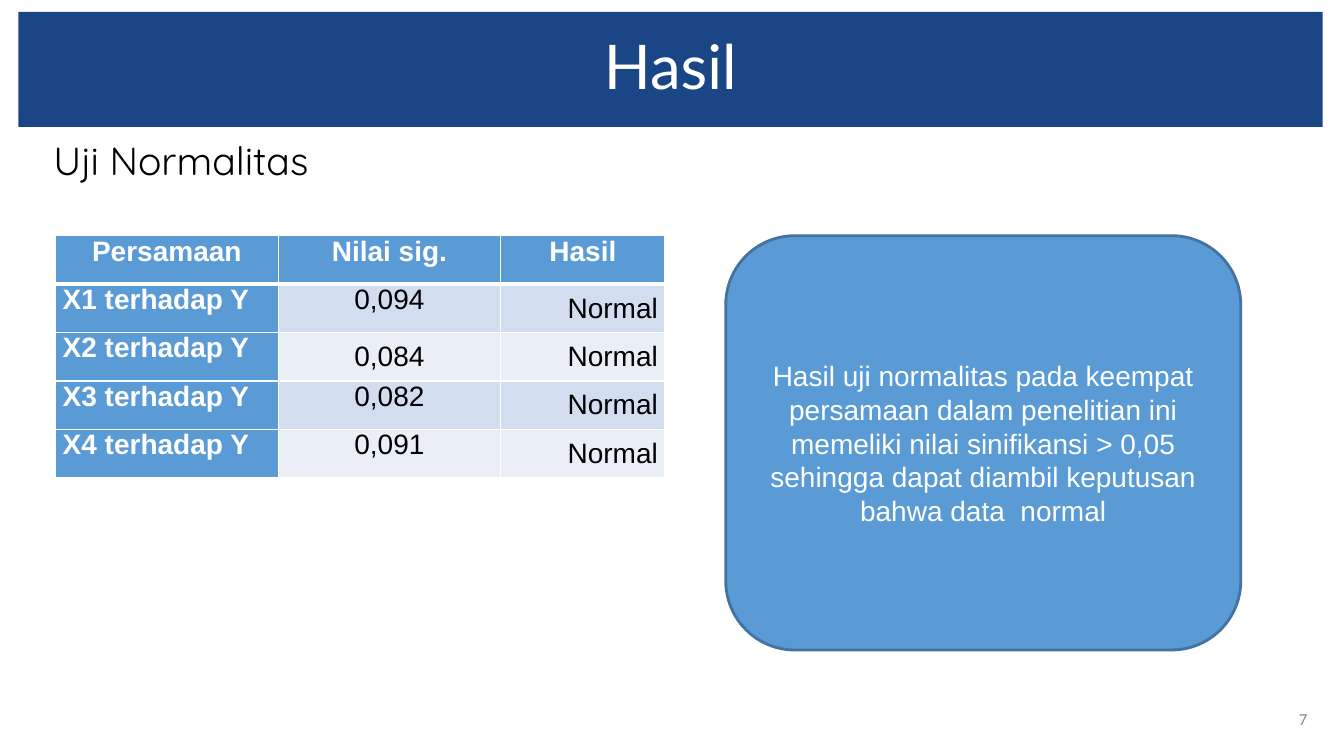
from lxml import etree
from pptx import Presentation
from pptx.dml.color import RGBColor
from pptx.enum.shapes import MSO_SHAPE as Shape
from pptx.enum.text import MSO_ANCHOR as Anchor, MSO_AUTO_SIZE as Fit, PP_ALIGN as Align
from pptx.oxml.ns import qn
from pptx.util import Cm, Pt

# Content
TITLE = "Hasil"
TOPIC = "Uji Normalitas"
NOTE = ("Hasil uji normalitas pada keempat persamaan dalam penelitian ini "
        "memeliki nilai sinifikansi > 0,05 sehingga dapat diambil keputusan "
        "bahwa data  normal")
PAGE = "7"
HEAD = ("Persamaan", "Nilai sig.", "Hasil")
ROWS = [
    ("X1 terhadap Y", "0,094", "Normal"),
    ("X2 terhadap Y", "0,084", "Normal"),
    ("X3 terhadap Y", "0,082", "Normal"),
    ("X4 terhadap Y", "0,091", "Normal"),
]
MID_ROW = 2  # the row whose value is centred vertically

# Colours
NAVY = RGBColor(0x1B, 0x46, 0x85)
BLUE = RGBColor(0x5B, 0x9B, 0xD5)
EDGE = RGBColor(0x43, 0x73, 0x9E)
BANDS = (RGBColor(0xEA, 0xEF, 0xF7), RGBColor(0xD2, 0xDE, 0xEF))
WHITE = RGBColor(0xFF, 0xFF, 0xFF)
BLACK = RGBColor(0, 0, 0)
GREY = RGBColor(0x88, 0x88, 0x88)

# Layout in centimetres
LEFT, WIDE = 0.46, 32.87
TOP = 5.94
COLS = (5.61, 5.61, 4.14)
ROW_H = 1.22
PAD = 0.18


def write(frame, text, font="Arial", size=20, color=BLACK, bold=False,
          align=Align.LEFT, space=1.0):
    para = frame.paragraphs[0]
    para.alignment = align
    para.line_spacing = space
    para.space_before = Pt(0)
    run = para.add_run()
    run.text = text
    run.font.name = font
    run.font.size = Pt(size)
    run.font.bold = bold
    run.font.color.rgb = color
    return para


def place(shape, left, top, width, height):
    shape.left, shape.top = Cm(left), Cm(top)
    shape.width, shape.height = Cm(width), Cm(height)


def border(cell, low, high):
    props = cell._tc.get_or_add_tcPr()
    for side, width in (("L", 1), ("R", 1), ("T", high), ("B", low)):
        line = etree.SubElement(props, qn(f"a:ln{side}"), w=str(Pt(width)))
        fill = etree.SubElement(line, qn("a:solidFill"))
        etree.SubElement(fill, qn("a:srgbClr"), val=str(WHITE))


def main():
    deck = Presentation()
    deck.slide_width, deck.slide_height = Cm(33.87), Cm(19.05)
    slide = deck.slides.add_slide(deck.slide_layouts[1])
    shapes = slide.shapes

    # Title band
    title = shapes.title
    place(title, LEFT, 0.3, WIDE, 2.9)
    title.fill.solid()
    title.fill.fore_color.rgb = NAVY
    title.text_frame.auto_size = Fit.NONE
    title.text_frame.vertical_anchor = Anchor.MIDDLE
    write(title.text_frame, TITLE, font="Lato", size=44, color=WHITE,
          align=Align.CENTER, space=0.9)

    # Topic line
    body = slide.placeholders[1]
    place(body, LEFT, 3.43, WIDE, 14.15)
    body.text_frame.auto_size = Fit.NONE
    topic = write(body.text_frame, TOPIC, font="Quicksand", size=28, space=0.9)
    props = topic._p.get_or_add_pPr()
    props.set("marL", str(Cm(1.27)))
    props.set("indent", str(Cm(-0.64)))
    etree.SubElement(props, qn("a:buNone"))

    # Conclusion card
    card = shapes.add_shape(Shape.ROUNDED_RECTANGLE, Cm(18.29), Cm(TOP),
                            Cm(12.98), Cm(10.44))
    card.shadow.inherit = False
    card.fill.solid()
    card.fill.fore_color.rgb = BLUE
    card.line.color.rgb = EDGE
    card.line.width = Pt(2)
    card.text_frame.word_wrap = True
    card.text_frame.vertical_anchor = Anchor.MIDDLE
    write(card.text_frame, NOTE, color=WHITE, align=Align.CENTER)

    # Table of test results
    grid = [HEAD] + ROWS
    table = shapes.add_table(len(grid), len(COLS), Cm(1.4), Cm(TOP),
                             Cm(sum(COLS)), Cm(ROW_H * len(grid))).table
    for col, width in zip(table.columns, COLS):
        col.width = Cm(width)
    aligns = (Align.JUSTIFY, Align.CENTER, Align.RIGHT)
    for r, row in enumerate(grid):
        table.rows[r].height = Cm(ROW_H)
        for c, text in enumerate(row):
            cell = table.cell(r, c)
            label = r == 0 or c == 0
            middle = r > 0 and (c == 2 or (r, c) == (MID_ROW, 1))
            border(cell, low=3 if r == 0 else 1, high=3 if r == 1 else 1)
            cell.fill.solid()
            cell.fill.fore_color.rgb = BLUE if label else BANDS[r % 2]
            cell.margin_left = cell.margin_right = Cm(PAD)
            cell.margin_top = cell.margin_bottom = 0
            cell.vertical_anchor = Anchor.MIDDLE if middle else Anchor.TOP
            write(cell.text_frame, text, bold=label,
                  color=WHITE if label else BLACK,
                  align=Align.CENTER if r == 0 else aligns[c])

    # Page number
    page = shapes.add_textbox(Cm(31.75), Cm(17.6), Cm(1.45), Cm(1.02))
    page.text_frame.word_wrap = True
    page.text_frame.vertical_anchor = Anchor.MIDDLE
    write(page.text_frame, PAGE, font="Calibri", size=12, color=GREY,
          align=Align.RIGHT)

    deck.save("out.pptx")


if __name__ == "__main__":
    main()
